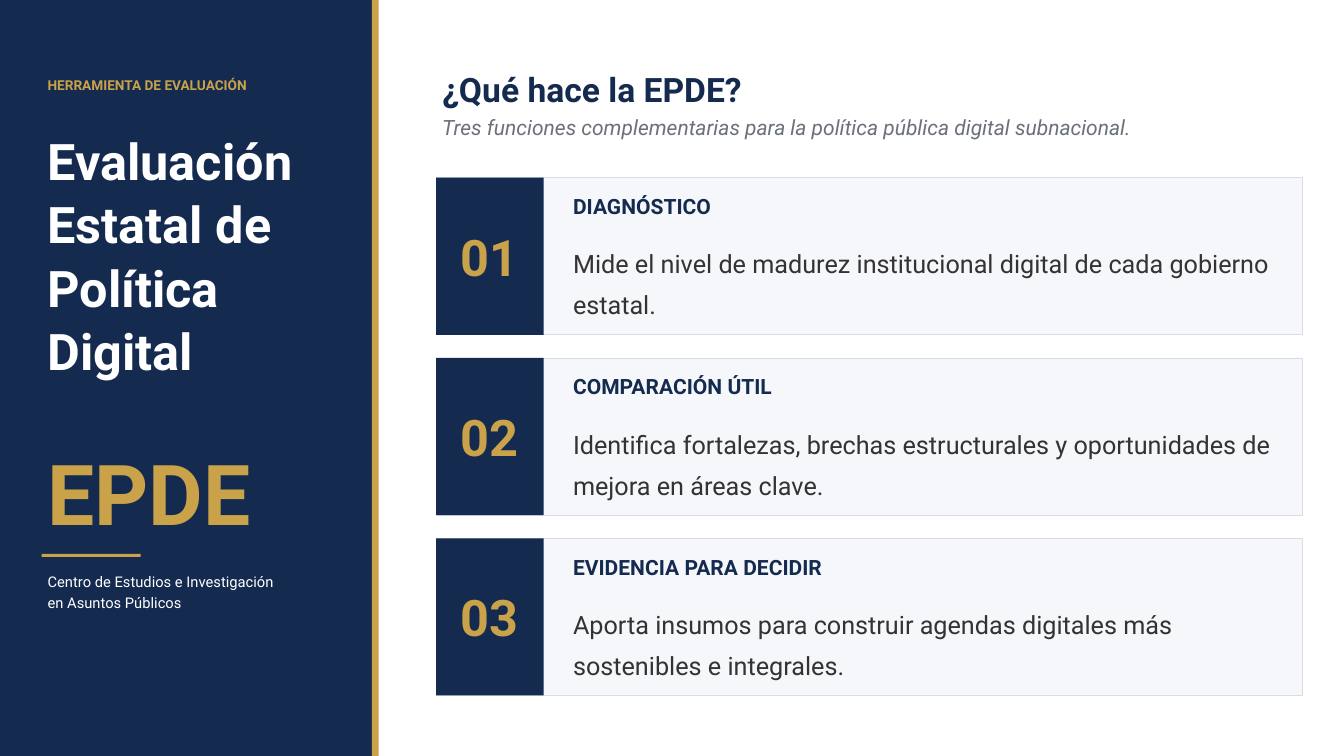
import pptx
import pptx.util
import pptx.dml.color
import pptx.enum.shapes
import pptx.enum.text
from dataclasses import dataclass

WIDE, HIGH = 17.78, 10
COLS, ROWS = 160, 90  # the grid all lengths are counted in


@dataclass(frozen=True)
class Theme:
    font: str = "Roboto"
    navy: str = "142A4F"
    gold: str = "C9A24A"
    white: str = "FFFFFF"
    pale: str = "F6F7FA"
    edge: str = "D8DCE3"
    gray: str = "6B707A"
    ink: str = "333333"
    tiny: int = 13
    small: int = 14
    label: int = 20
    body: int = 24
    head: int = 32
    big: int = 48
    huge: int = 80


THEME = Theme()
CARDS = [
    ("DIAGNÓSTICO",
     "Mide el nivel de madurez institucional digital de cada gobierno estatal."),
    ("COMPARACIÓN ÚTIL",
     "Identifica fortalezas, brechas estructurales y oportunidades de mejora en áreas clave."),
    ("EVIDENCIA PARA DECIDIR",
     "Aporta insumos para construir agendas digitales más sostenibles e integrales."),
]


def color(code):
    return pptx.dml.color.RGBColor.from_string(code)


def part(box, left, top, wide, high):
    """Grid box placed relative to the corner of another one."""
    return box[0] + left, box[1] + top, wide, high


def place(box):
    """Turn a grid box into slide lengths."""
    col, row = WIDE / COLS, HIGH / ROWS
    return [pptx.util.Inches(n * unit) for n, unit in zip(box, (col, row, col, row))]


def rect(slide, box, fill, line=None):
    shape = slide.shapes.add_shape(pptx.enum.shapes.MSO_SHAPE.RECTANGLE, *place(box))
    shape.shadow.inherit = False
    shape.fill.solid()
    shape.fill.fore_color.rgb = color(fill)
    if line:
        shape.line.color.rgb = color(line)
        shape.line.width = pptx.util.Pt(0.75)
    else:
        shape.line.fill.background()


def write(slide, box, text, *, size, tone, bold=False, italic=False,
          space=1.0, center=False, holder=None):
    """Set text in a new box, or in a placeholder; each line is a paragraph."""
    shape = holder or slide.shapes.add_textbox(*place(box))
    shape.left, shape.top, shape.width, shape.height = place(box)
    frame = shape.text_frame
    frame.word_wrap = True
    frame.auto_size = pptx.enum.text.MSO_AUTO_SIZE.NONE
    anchor, align = pptx.enum.text.MSO_ANCHOR, pptx.enum.text.PP_ALIGN
    frame.vertical_anchor = anchor.MIDDLE if center else anchor.TOP
    frame.margin_left = frame.margin_right = pptx.util.Inches(0.08)
    frame.margin_top = frame.margin_bottom = pptx.util.Inches(0.04)
    frame.text = text
    for para in frame.paragraphs:
        para.alignment = align.CENTER if center else align.LEFT
        para.line_spacing = space
        for run in para.runs:
            font = run.font
            font.name, font.size = THEME.font, pptx.util.Pt(size)
            font.bold, font.italic = bold, italic
            font.color.rgb = color(tone)


def panel(slide, box):
    """Navy side panel with the name of the tool."""
    bar, pad = 0.8, 4.95
    wide = box[2] - bar
    rect(slide, part(box, 0, 0, wide, box[3]), THEME.navy)
    rect(slide, part(box, wide, 0, bar, box[3]), THEME.gold)
    write(slide, part(box, pad, 8.82, 34.5, 4.95), "HERRAMIENTA DE EVALUACIÓN",
          size=THEME.tiny, tone=THEME.gold, bold=True)
    write(slide, part(box, pad, 14.76, 36.45, 30.9),
          "Evaluación\nEstatal de\nPolítica Digital",
          size=THEME.big, tone=THEME.white, bold=True, space=1.05)
    write(slide, part(box, pad, 52.2, 34.5, 11.8), "EPDE",
          size=THEME.huge, tone=THEME.gold, bold=True)
    rect(slide, part(box, pad, 65.95, 11.8, 0.36), THEME.gold)
    write(slide, part(box, pad, 67.4, 34.5, 5.6),
          "Centro de Estudios e Investigación\ven Asuntos Públicos",
          size=THEME.small, tone=THEME.white, space=1.2)


def header(slide, box):
    """Slide title and its subtitle."""
    write(slide, part(box, 0, 0, box[2], 5.6), "¿Qué hace la EPDE?",
          size=THEME.head, tone=THEME.navy, bold=True, holder=slide.shapes.title)
    write(slide, part(box, 0, 5.5, box[2], 3.8),
          "Tres funciones complementarias para la política pública digital subnacional.",
          size=THEME.label, tone=THEME.gray, italic=True)


def card(slide, box, mark, head, body):
    """Numbered card: navy strip, heading and text."""
    strip, left, wide = 12.78, 15.57, 84.8
    rect(slide, box, THEME.pale, THEME.edge)
    rect(slide, part(box, 0, 0, strip, box[3]), THEME.navy)
    write(slide, part(box, 0, 5.35, strip, 8), mark,
          size=THEME.big, tone=THEME.gold, bold=True, center=True)
    write(slide, part(box, left, 1.53, wide, 3.8), head,
          size=THEME.label, tone=THEME.navy, bold=True)
    write(slide, part(box, left, 6.84, wide, 10.1), body,
          size=THEME.body, tone=THEME.ink, space=1.35)


def stack(slide, box, gap):
    """Equal cards, one under the other."""
    high = (box[3] - gap * (len(CARDS) - 1)) / len(CARDS)
    for i, (head, body) in enumerate(CARDS):
        spot = part(box, 0, i * (high + gap), box[2], high)
        card(slide, spot, f"{i + 1:02}", head, body)


def main():
    deck = pptx.Presentation()
    deck.slide_width = pptx.util.Inches(WIDE)
    deck.slide_height = pptx.util.Inches(HIGH)
    slide = deck.slides.add_slide(deck.slide_layouts[5])
    left, wide = 51.93, 103.14
    panel(slide, (0, 0, 45.08, ROWS))
    header(slide, (left, 7.83, wide, 9.3))
    stack(slide, (left, 21.15, wide, 61.65), gap=2.75)
    deck.save("out.pptx")


if __name__ == "__main__":
    main()
